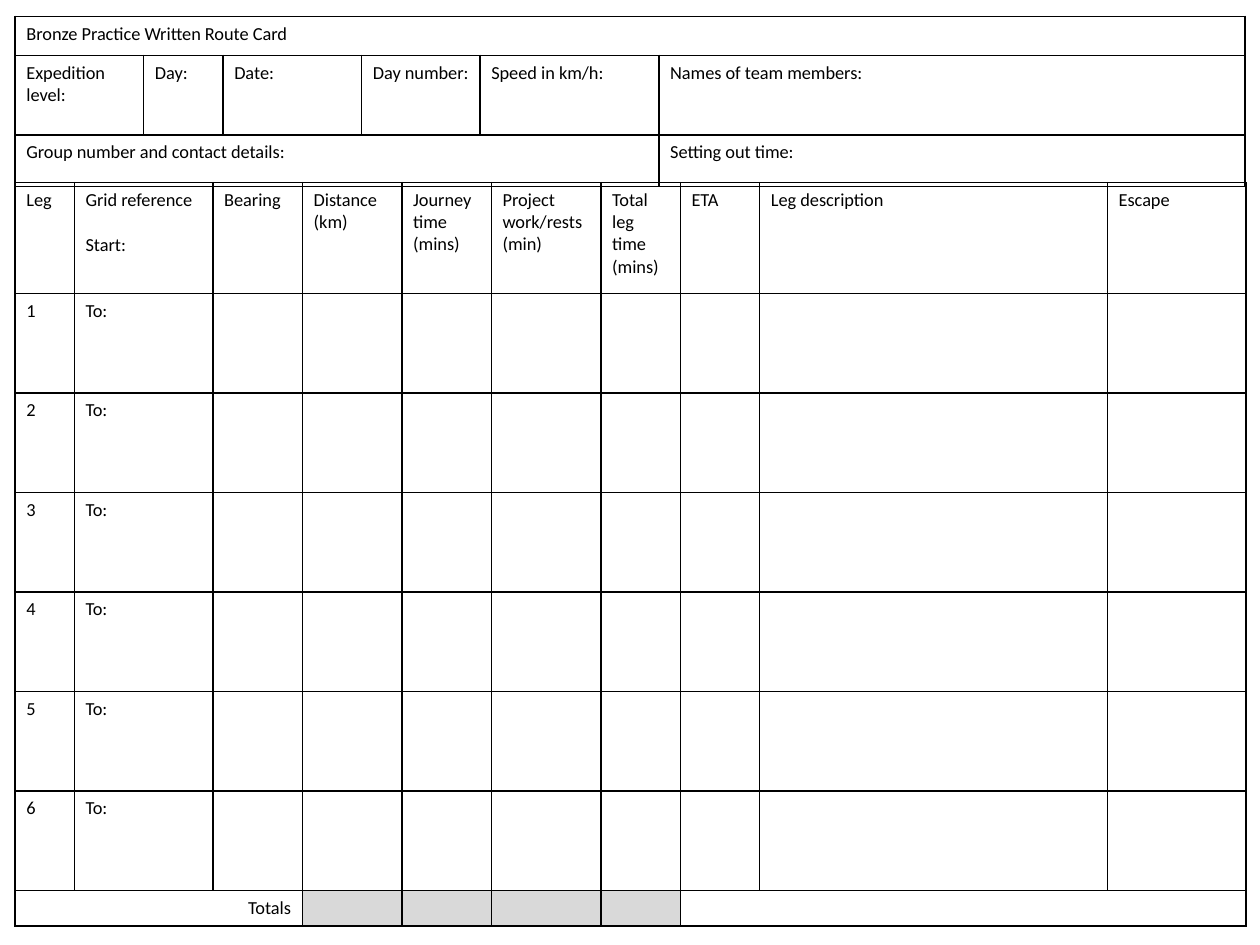
from dataclasses import dataclass, field

import pptx
import pptx.dml.color
import pptx.enum.text
import pptx.oxml
import pptx.oxml.ns
import pptx.util
from pptx.util import Inches

FONT_SIZE = pptx.util.Pt(10.5)
LINE_HEIGHT = pptx.util.Pt(12.8)
TEXT_FORMAT = {"name": "Calibri", "size": FONT_SIZE}
CELL_FORMAT = {"margin_left": Inches(0.09), "margin_right": Inches(0.09),
               "margin_top": Inches(0.05), "margin_bottom": Inches(0.05)}
TABLE_FORMAT = {"first_row": False, "horz_banding": False}
BLACK, GREY = "000000", "D9D9D9"
LEFT = 0.12
LEG_COUNT = 6


@dataclass(frozen=True)
class Entry:
    """Content of one cell, which may reach over several columns."""
    text: str = ""
    span: int = 1
    fill: str = ""
    right: bool = False


@dataclass(frozen=True)
class Grid:
    top: float
    widths: list[float]
    heights: list[float]
    rows: list[list[Entry]] = field(default_factory=list)


def colour(code: str) -> pptx.dml.color.RGBColor:
    return pptx.dml.color.RGBColor.from_string(code)


def apply_format(target, values: dict) -> None:
    for name, value in values.items():
        setattr(target, name, value)


def add_borders(cell) -> None:
    properties = cell._tc.get_or_add_tcPr()
    namespace = pptx.oxml.ns.nsdecls("a")
    for side in ("lnL", "lnR", "lnT", "lnB"):
        properties.append(pptx.oxml.parse_xml(
            f'<a:{side} {namespace} w="12700"><a:solidFill>'
            f'<a:srgbClr val="{BLACK}"/></a:solidFill></a:{side}>'))


def set_empty_size(para) -> None:
    """Keep an empty cell from growing to the default text size."""
    para._p.append(pptx.oxml.parse_xml(
        f'<a:endParaRPr {pptx.oxml.ns.nsdecls("a")} '
        f'sz="{int(FONT_SIZE.pt * 100)}"/>'))


def write_entry(cell, entry: Entry) -> None:
    if entry.fill:
        cell.fill.solid()
        cell.fill.fore_color.rgb = colour(entry.fill)
    frame = cell.text_frame
    for index, line in enumerate(entry.text.split("\n")):
        para = frame.add_paragraph() if index else frame.paragraphs[0]
        if index:
            para.space_before = LINE_HEIGHT
        if entry.right:
            para.alignment = pptx.enum.text.PP_ALIGN.RIGHT
        if line:
            span = para.add_run()
            span.text = line
            apply_format(span.font, TEXT_FORMAT)
            span.font.color.rgb = colour(BLACK)
        else:
            set_empty_size(para)


def draw_grid(page, grid: Grid) -> None:
    table = page.shapes.add_table(
        len(grid.heights), len(grid.widths), Inches(LEFT), Inches(grid.top),
        Inches(sum(grid.widths)), Inches(sum(grid.heights))).table
    apply_format(table, TABLE_FORMAT)
    for column, width in zip(table.columns, grid.widths):
        column.width = Inches(width)
    for row, height in zip(table.rows, grid.heights):
        row.height = Inches(height)
    for cell in table.iter_cells():
        apply_format(cell, CELL_FORMAT)
        add_borders(cell)
        cell.fill.background()
    for row_index, entries in enumerate(grid.rows):
        column_index = 0
        for entry in entries:
            cell = table.cell(row_index, column_index)
            column_index += entry.span
            if entry.span > 1:
                cell.merge(table.cell(row_index, column_index - 1))
            write_entry(cell, entry)


def entries_of(*texts: str) -> list[Entry]:
    return [Entry(text) for text in texts]


HEADER = Grid(
    top=0.13,
    widths=[1.02, 0.63, 1.1, 0.94, 1.42, 4.65],
    heights=[0.31, 0.63, 0.41],
    rows=[
        [Entry("Bronze Practice Written Route Card", span=6)],
        entries_of("Expedition level:", "Day:", "Date:", "Day number:",
                   "Speed in km/h:", "Names of team members:"),
        [Entry("Group number and contact details:", span=5),
         Entry("Setting out time:")],
    ])

LEGS = Grid(
    top=1.45,
    widths=[0.47, 1.1, 0.71, 0.79, 0.71, 0.87, 0.63, 0.63, 2.76, 1.1],
    heights=[0.88] + [0.79] * LEG_COUNT + [0.28],
    rows=[
        entries_of("Leg", "Grid reference\nStart:", "Bearing", "Distance (km)",
                   "Journey time (mins)", "Project work/rests (min)",
                   "Total leg time (mins)", "ETA", "Leg description", "Escape"),
        *[entries_of(str(leg), "To:", *[""] * 8)
          for leg in range(1, LEG_COUNT + 1)],
        [Entry("Totals", span=3, right=True), *[Entry(fill=GREY)] * 4,
         Entry(span=3)],
    ])


def main() -> None:
    deck = pptx.Presentation()
    apply_format(deck, {"slide_width": Inches(10), "slide_height": Inches(7.5)})
    page = deck.slides.add_slide(deck.slide_layouts[6])
    for grid in (HEADER, LEGS):
        draw_grid(page, grid)
    deck.save("out.pptx")


if __name__ == "__main__":
    main()
